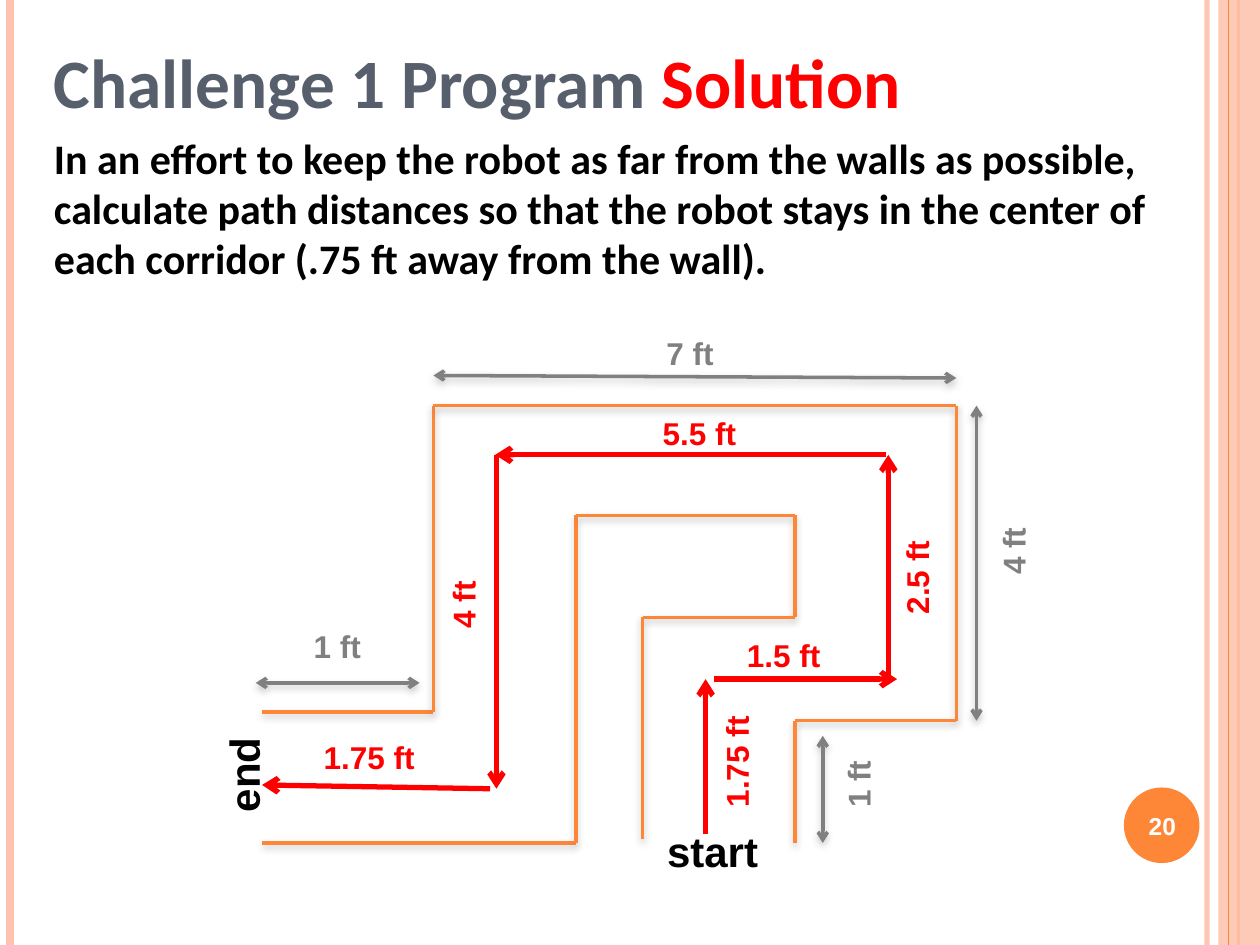
from itertools import pairwise
from lxml import etree
from pptx import Presentation
from pptx.dml.color import RGBColor
from pptx.enum.shapes import MSO_CONNECTOR, MSO_SHAPE
from pptx.enum.text import MSO_ANCHOR, PP_ALIGN
from pptx.oxml.ns import qn
from pptx.util import Inches, Pt

LINE = MSO_CONNECTOR.STRAIGHT
RECT, OVAL = MSO_SHAPE.RECTANGLE, MSO_SHAPE.OVAL
TOP, MID, LOW = MSO_ANCHOR.TOP, MSO_ANCHOR.MIDDLE, MSO_ANCHOR.BOTTOM
LEFT, CENTER = PP_ALIGN.LEFT, PP_ALIGN.CENTER

COLORS = {
    "peach": "FEC3AE", "orange": "FE8637", "gray": "808080", "red": "FF0000",
    "slate": "575F6D", "black": "000000", "white": "FFFFFF",
}
WIDE, HIGH = 10, 7.5

TITLE = [("Challenge 1 Program ", "slate"), ("Solution", "red")]
BODY = ("In an effort to keep the robot as far from the walls as possible, "
        "calculate path distances so that the robot stays in the center of "
        "each corridor (.75 ft away from the wall).")

WALLS = [
    [(2.08, 5.65), (3.44, 5.65), (3.44, 3.22), (7.59, 3.22), (7.59, 5.72),
     (6.31, 5.72), (6.31, 6.69)],
    [(2.08, 6.69), (4.57, 6.69), (4.57, 4.09), (6.31, 4.09), (6.31, 4.9),
     (5.1, 4.9), (5.1, 6.66)],
]
SPANS = [
    ((6.53, 5.84), (6.53, 6.69)),
    ((3.44, 2.98), (7.59, 3)),
    ((7.75, 3.22), (7.75, 5.72)),
    ((2.03, 5.42), (3.33, 5.42)),
]
MOVES = [
    ((5.6, 6.62), (5.6, 5.39)),
    ((5.67, 5.39), (7.12, 5.39)),
    ((7.05, 5.38), (7.05, 3.61)),
    ((7.03, 3.61), (3.93, 3.61)),
    ((3.94, 3.61), (3.94, 6.26)),
    ((3.89, 6.26), (2.08, 6.23)),
]
SIZES = [
    ("7 ft", (5.19, 2.6, 0.65, 0.4), 0),
    ("1 ft", (6.45, 5.95, 0.72, 0.4), 270),
    ("4 ft", (7.66, 4.08, 0.76, 0.4), 270),
    ("1 ft", (2.39, 4.93, 0.79, 0.4), 0),
]
STEPS = [
    ("1.5 ft", (5.83, 5, 0.9, 0.4), 0),
    ("2.5 ft", (6.68, 4.18, 1.19, 0.4), 270),
    ("5.5 ft", (5.16, 3.24, 1.12, 0.4), 0),
    ("4 ft", (3.08, 4.29, 1.19, 0.4), 270),
    ("1.75 ft", (2.47, 5.81, 1.1, 0.4), 0),
    ("1.75 ft", (5.25, 5.71, 1.19, 0.4), 270),
]
ENDS = [
    ("start", (4.79, 6.5, 1.73, 0.5), 0),
    ("end", (1.46, 5.9, 0.94, 0.5), 270),
]

deck = Presentation()
deck.slide_width, deck.slide_height = Inches(WIDE), Inches(HIGH)
slide = deck.slides.add_slide(deck.slide_layouts[6])
shapes = slide.shapes


def tint(name):
    return RGBColor.from_string(COLORS[name])


def child(node, tag, **attrs):
    return etree.SubElement(node, qn(tag), attrs)


def fade(fill, part):
    tone = fill.find(".//" + qn("a:srgbClr"))
    child(tone, "a:alpha", val=str(part * 1000))


def draw(start, end, color, width, heads=(), shade=False):
    line = shapes.add_connector(LINE, *map(Inches, start + end))
    line.line.color.rgb = tint(color)
    line.line.width = Pt(width)
    for tag in heads:
        child(line.line._ln, tag, type="arrow")
    glow = child(line._element.spPr, "a:effectLst")
    if shade:
        cast = child(glow, "a:outerShdw", blurRad=str(Pt(4)), dist=str(Pt(2)),
                     dir="5400000", rotWithShape="0")
        tone = child(cast, "a:srgbClr", val=COLORS["gray"])
        child(tone, "a:alpha", val="40000")
    return line


def block(kind, box, color):
    shape = shapes.add_shape(kind, *map(Inches, box))
    shape.shadow.inherit = False
    shape.fill.solid()
    shape.fill.fore_color.rgb = tint(color)
    shape.line.fill.background()
    return shape


def write(runs, box, size, font="Arial", align=LEFT, anchor=TOP, turn=0):
    shape = shapes.add_textbox(*map(Inches, box))
    shape.rotation = turn
    frame = shape.text_frame
    frame.word_wrap = True
    frame.vertical_anchor = anchor
    para = frame.paragraphs[0]
    para.alignment = align
    para.font.size, para.font.name, para.font.bold = Pt(size), font, True
    for text, color in runs:
        run = para.add_run()
        run.text = text
        run.font.color.rgb = tint(color)
    return para


def rail(x, color, width):
    return draw((x, 0), (x, HIGH), color, width)


edge = rail(9.58, "peach", 3)
fade(edge.line._ln, 93)
rail(0.08, "peach", 4.5)
rail(9.83, "orange", 1.5)
band = block(RECT, (9.67, 0, 0.33, HIGH), "peach")
fade(band._element.spPr, 87)
rail(9.75, "orange", 0.75)
block(OVAL, (8.92, 6.25, 0.6, 0.6), "orange")
write([("20", "white")], (8.89, 6.27, 0.67, 0.57), 14, align=CENTER, anchor=MID)

for wall in WALLS:
    for start, end in pairwise(wall):
        draw(start, end, "orange", 2, shade=True)
for start, end in SPANS:
    draw(start, end, "gray", 2, ("a:headEnd", "a:tailEnd"), True)
for start, end in MOVES:
    draw(start, end, "red", 3, ("a:tailEnd",))

for group, color, size, align in [(SIZES, "gray", 18, LEFT),
                                  (STEPS, "red", 18, LEFT),
                                  (ENDS, "black", 24, CENTER)]:
    for text, box, turn in group:
        write([(text, color)], box, size, align=align, turn=turn)

body = write([(BODY, "black")], (0.33, 1, 9.42, 1.43), 24, "Calibri")
body.space_before = Pt(6)
write(TITLE, (0.33, 0.3, 8.86, 0.72), 39.6, "Calibri", anchor=LOW)

deck.save("out.pptx")
